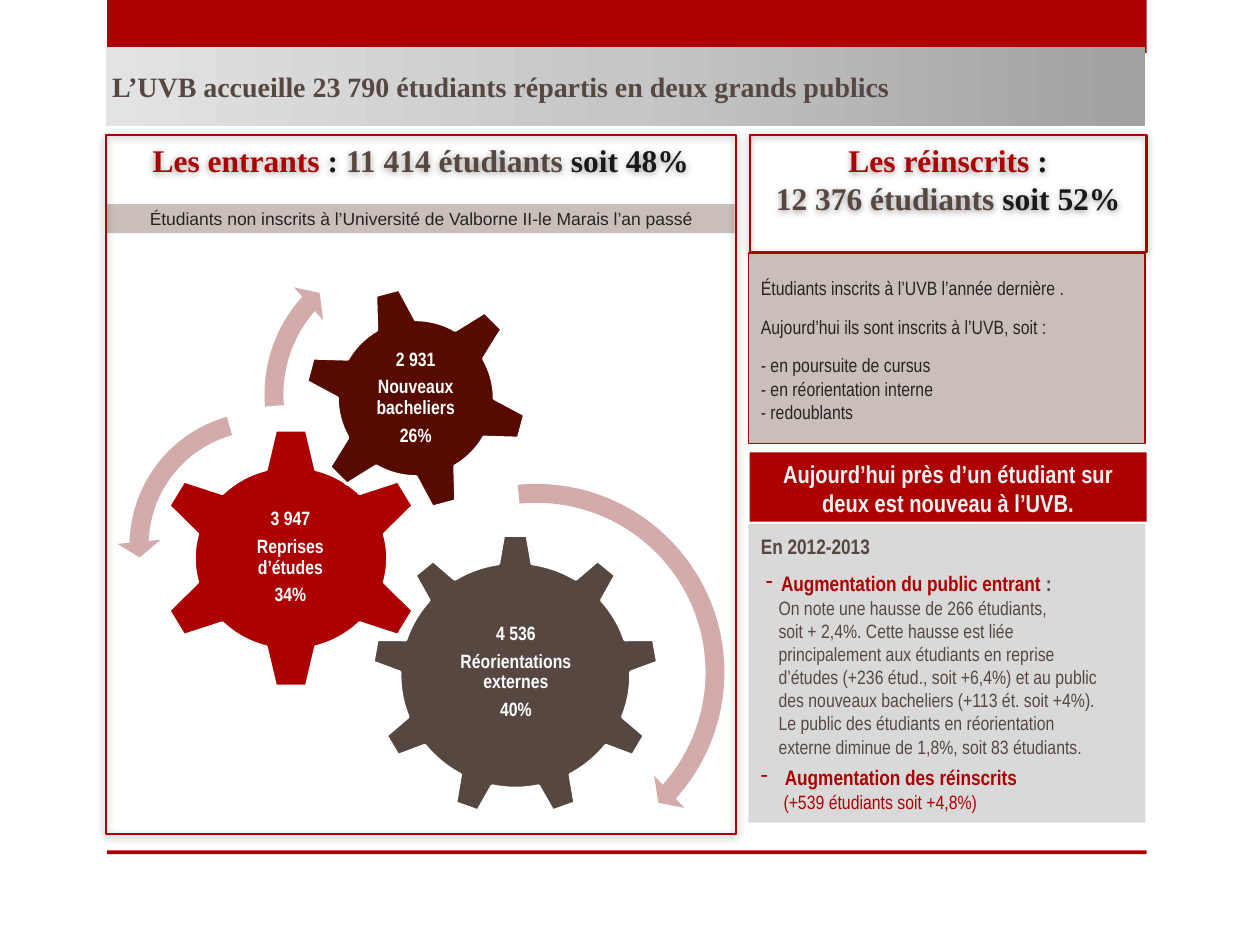
from copy import deepcopy
from dataclasses import dataclass
from typing import Optional

from lxml import etree
from pptx import Presentation
from pptx.dml.color import RGBColor
from pptx.enum.shapes import MSO_SHAPE
from pptx.enum.text import MSO_ANCHOR, PP_ALIGN
from pptx.oxml.ns import qn
from pptx.util import Inches, Pt

RECT, GEAR6, GEAR9 = MSO_SHAPE.RECTANGLE, MSO_SHAPE.GEAR_6, MSO_SHAPE.GEAR_9
ARC, LEFT_ARC = MSO_SHAPE.CIRCULAR_ARROW, MSO_SHAPE.LEFT_CIRCULAR_ARROW
LEFT, CENTER, JUST = PP_ALIGN.LEFT, PP_ALIGN.CENTER, PP_ALIGN.JUSTIFY
TOP, MIDDLE = MSO_ANCHOR.TOP, MSO_ANCHOR.MIDDLE


@dataclass(frozen=True)
class Theme:
    red: str = "AD0101"
    maroon: str = "560A00"
    brown: str = "564841"
    beige: str = "CABFB8"
    pink: str = "D3ABAB"
    gray: str = "D9D9D9"
    ink: str = "242424"
    black: str = "181818"
    pale: str = "F2F2F2"
    white: str = "FFFFFF"
    fade: tuple = ((0, "A1A1A1"), (0.5, "C6C6C6"), (1, "E3E3E3"))
    serif: str = "Times New Roman"
    sans: str = "Arial"
    narrow: str = "Arial Narrow"
    head: int = 18
    title: int = 16
    claim: int = 14
    sub: int = 12
    body: int = 11
    small: int = 10


T = Theme()
Box = tuple[float, float, float, float]


@dataclass
class Style:
    font: str
    size: int
    color: str
    bold: bool = False
    align: PP_ALIGN = CENTER


@dataclass
class Line:
    runs: list  # (text, color or None) pairs
    size: Optional[int] = None
    color: Optional[str] = None
    bold: Optional[bool] = None
    gap: float = 0
    left: float = 0
    hang: float = 0


@dataclass
class Gear:
    kind: MSO_SHAPE
    box: Box
    color: str
    label: Box
    words: tuple
    turn: float = 0


@dataclass
class Arc:
    kind: MSO_SHAPE
    box: Box
    shape: tuple
    turn: float = 0


def rgb(code: str) -> RGBColor:
    return RGBColor.from_string(code)


def draw(slide, kind: MSO_SHAPE, box: Box, fill: Optional[str] = None,
         edge: Optional[str] = None, width: float = 1):
    part = slide.shapes.add_shape(kind, *map(Inches, box))
    part.shadow.inherit = False
    if fill:
        part.fill.solid()
        part.fill.fore_color.rgb = rgb(fill)
    else:
        part.fill.background()
    if edge:
        part.line.color.rgb = rgb(edge)
        part.line.width = Pt(width)
    else:
        part.line.fill.background()
    return part


def write(part, lines: list, style: Style, anchor: MSO_ANCHOR = MIDDLE,
          pad: Box = (0.1, 0.05, 0.1, 0.05)) -> None:
    frame = part.text_frame
    frame.word_wrap = True
    frame.vertical_anchor = anchor
    (frame.margin_left, frame.margin_top,
     frame.margin_right, frame.margin_bottom) = map(Inches, pad)
    for n, line in enumerate(lines):
        para = frame.add_paragraph() if n else frame.paragraphs[0]
        para.alignment = style.align
        para.space_before = Pt(line.gap)
        para.font.name = style.font
        para.font.size = Pt(line.size or style.size)
        para.font.bold = style.bold if line.bold is None else line.bold
        para.font.color.rgb = rgb(line.color or style.color)
        props = para._p.get_or_add_pPr()
        props.set("marL", str(Inches(line.left)))
        props.set("indent", str(Inches(-line.hang)))
        if line.hang:
            mark = etree.Element(qn("a:buChar"), char="-")
            props.insert_element_before(mark, "a:tabLst", "a:defRPr", "a:extLst")
        for text, color in line.runs:
            run = para.add_run()
            run.text = text
            if color:
                run.font.color.rgb = rgb(color)


def plain(text: str, **more) -> Line:
    return Line([(text, None)], **more)


def shade(part) -> None:
    glow = etree.SubElement(part.element.spPr.find(qn("a:effectLst")), qn("a:outerShdw"),
                            blurRad=str(Pt(4)), dist=str(Pt(1)), dir=str(88 * 60000))
    tint = etree.SubElement(glow, qn("a:srgbClr"), val="000000")
    etree.SubElement(tint, qn("a:alpha"), val="40000")


def blend(part, stops: tuple) -> None:
    part.fill.gradient()
    part.fill.gradient_angle = 180
    group = next(part.element.spPr.iter(qn("a:gsLst")))
    group.append(deepcopy(group[0]))
    for stop, (place, color) in zip(part.fill.gradient_stops, stops):
        stop.position = place
        stop.color.rgb = rgb(color)


def add_gear(slide, gear: Gear) -> None:
    draw(slide, gear.kind, gear.box, gear.color, T.white, 1.75).rotation = gear.turn
    label = slide.shapes.add_textbox(*map(Inches, gear.label))
    write(label, [plain(word, gap=4 if n else 0) for n, word in enumerate(gear.words)],
          Style(T.narrow, T.body, T.white, True), pad=(0.02,) * 4)
    for para in label.text_frame.paragraphs:
        para.line_spacing = 0.9


def add_arc(slide, arc: Arc) -> None:
    part = draw(slide, arc.kind, arc.box, T.pink)
    part.rotation = arc.turn
    for n, value in enumerate(arc.shape):
        part.adjustments[n] = value


GEARS = [
    Gear(GEAR9, (2.95, 4.24, 2.28, 2.24), T.brown, (3.41, 4.76, 1.37, 1.15),
         ("4 536", "Réorientations externes", "40%")),
    Gear(GEAR6, (1.23, 3.39, 2.16, 2.08), T.red, (1.76, 3.91, 1.09, 1.03),
         ("3 947", "Reprises d’études", "34%")),
    Gear(GEAR6, (2.41, 2.27, 1.78, 1.78), T.maroon, (2.8, 2.66, 1, 1),
         ("2 931", "Nouveaux bacheliers", "26%"), 345),
]
ARCS = [
    Arc(ARC, (2.66, 3.74, 3.19, 3.19), (0.047, 2.99, 25.15, 158.637, 0.055)),
    Arc(LEFT_ARC, (0.93, 3.17, 2.32, 2.32), (0.065, 4.3, 104.891, 148.378, 0.075), 6.9),
    Arc(ARC, (2, 1.88, 2.5, 2.5), (0.06, 3.941, 133.138, 105.082, 0.07)),
]
NOTES = [
    "On note une hausse de 266 étudiants,",
    "soit + 2,4%. Cette hausse est liée",
    "principalement aux étudiants en reprise",
    "d’études (+236 étud., soit +6,4%) et au public",
    "des nouveaux bacheliers (+113 ét. soit +4%).",
    "Le public des étudiants en réorientation",
    "externe diminue de 1,8%, soit 83 étudiants.",
]
TREND = [
    plain("En 2012-2013", size=T.sub, bold=True),
    Line([("Augmentation du public entrant", T.red), (" :", None)],
         size=T.sub, bold=True, gap=7, left=0.16, hang=0.12),
    *[plain(note, left=0.14) for note in NOTES],
    plain("Augmentation des réinscrits", size=T.sub, color=T.red, bold=True,
          gap=4, left=0.19, hang=0.19),
    plain("(+539 étudiants soit +4,8%)", color=T.red, left=0.18),
]
BACK = [
    plain("Étudiants inscrits à l’UVB l’année dernière ."),
    plain("Aujourd’hui ils sont inscrits à l’UVB, soit :", gap=9),
    plain("- en poursuite de cursus", gap=9),
    plain("- en réorientation interne"),
    plain("- redoublants"),
]
HEADS = [
    ((0.84, 1.07, 5, 5.55),
     [Line([("Les entrants ", T.red), (": ", None),
            ("11 414 étudiants ", T.brown), ("soit 48%", None)])]),
    ((5.95, 1.07, 3.15, 0.93),
     [Line([("Les réinscrits ", T.red), (":", None)]),
      Line([("12 376 étudiants ", T.brown), ("soit 52%", None)])]),
]


def main() -> None:
    deck = Presentation()
    deck.slide_width, deck.slide_height = Inches(10), Inches(7.5)
    slide = deck.slides.add_slide(deck.slide_layouts[6])

    # Top band and foot rule
    for top, height in ((0, 0.42), (6.75, 0.03)):
        draw(slide, RECT, (0.85, top, 8.25, height), T.red)

    # New students: caption, gears and arrows
    write(draw(slide, RECT, (0.85, 1.62, 4.98, 0.23), T.beige),
          [plain("Étudiants non inscrits à l’Université de Valborne II-le Marais l’an passé")],
          Style(T.sans, T.small, T.ink))
    for gear in GEARS:
        add_gear(slide, gear)
    for arc in ARCS:
        add_arc(slide, arc)

    # Trend panel and its claim
    write(draw(slide, RECT, (5.94, 4.16, 3.15, 2.37), T.gray), TREND,
          Style(T.narrow, T.body, T.brown, align=JUST))
    write(draw(slide, RECT, (5.95, 3.59, 3.15, 0.55), T.red),
          [plain("Aujourd’hui près d’un étudiant sur deux est nouveau à l’UVB.")],
          Style(T.narrow, T.claim, T.pale, True), TOP)

    # Title bar
    title = draw(slide, RECT, (0.84, 0.37, 8.25, 0.63))
    blend(title, T.fade)
    write(title, [plain("L’UVB accueille 23 790 étudiants répartis en deux grands publics")],
          Style(T.serif, T.title, T.brown, True, LEFT), pad=(0.05, 0, 0.05, 0))

    # Framed headings
    for box, lines in HEADS:
        frame = draw(slide, RECT, box, edge=T.red, width=1.25)
        shade(frame)
        write(frame, lines, Style(T.serif, T.head, T.black, True), TOP)

    # Returning students
    write(draw(slide, RECT, (5.94, 2.01, 3.15, 1.51), T.beige, T.red), BACK,
          Style(T.narrow, T.body, T.ink, align=LEFT), TOP, (0.1, 0.18, 0.1, 0.05))

    deck.save("out.pptx")


if __name__ == "__main__":
    main()
